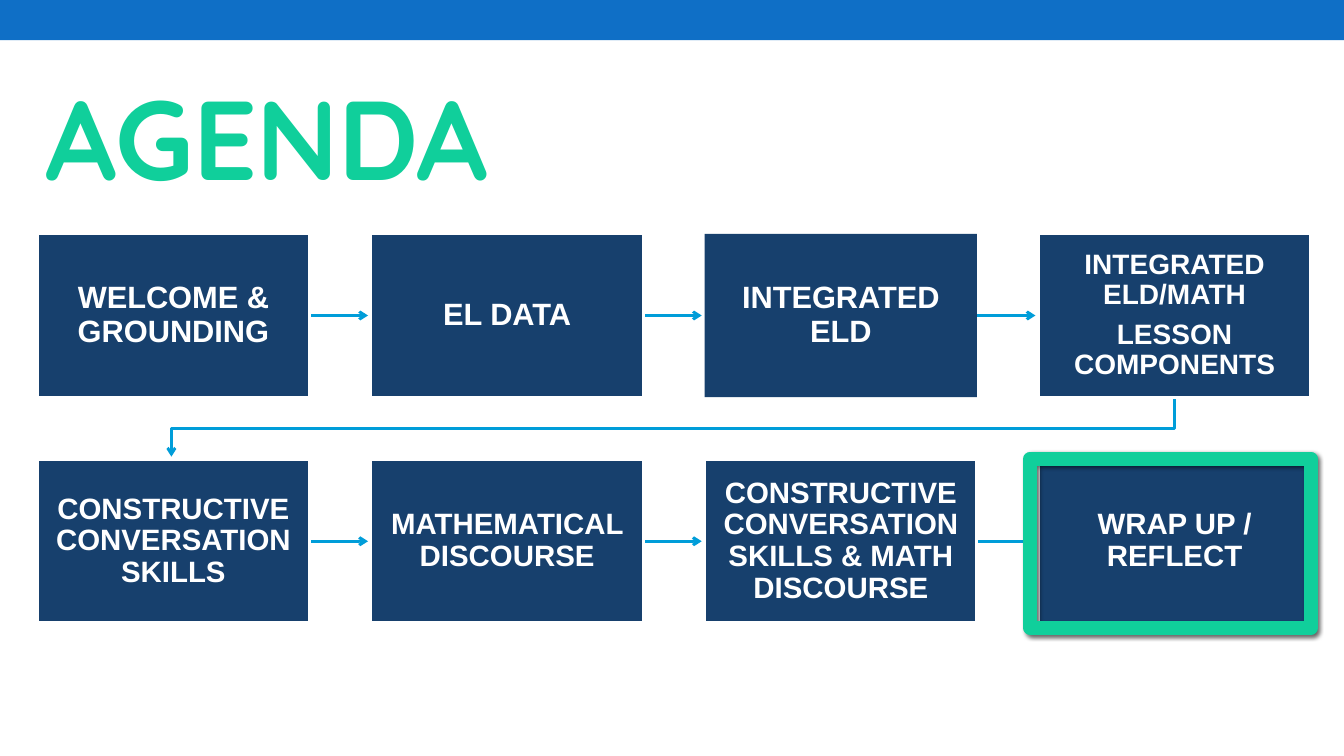
from dataclasses import dataclass

from lxml.etree import SubElement
from pptx import Presentation
from pptx.dml.color import RGBColor
from pptx.enum.shapes import MSO_CONNECTOR as Connector, MSO_SHAPE as Preset
from pptx.enum.text import MSO_ANCHOR as Anchor, MSO_AUTO_SIZE as AutoSize, PP_ALIGN as Align
from pptx.oxml import parse_xml
from pptx.oxml.ns import nsdecls, qn
from pptx.util import Inches, Pt


@dataclass(frozen=True)
class Theme:
    band: RGBColor = RGBColor.from_string("0F6FC6")
    accent: RGBColor = RGBColor.from_string("10CF9B")
    box: RGBColor = RGBColor.from_string("17406D")
    arrow: RGBColor = RGBColor.from_string("009DD9")
    white: RGBColor = RGBColor.from_string("FFFFFF")
    title_font: str = "Quicksand"
    body_font: str = "Arial"
    title_size: float = 80
    arrow_width: float = 2
    border_width: float = 2.08
    frame_width: float = 10


@dataclass(frozen=True)
class Step:
    text: str
    size: float
    inset: float
    bordered: bool = True


THEME = Theme()
BOX_WIDTH, BOX_HEIGHT = 2.7, 1.62
FIRST_LEFT, PITCH = 0.37, 3.31
ROW_TOPS = (2.32, 4.56)
ARROW_LENGTH = 0.58

ROWS = (
    (
        Step("WELCOME & GROUNDING", 22, 0.17),
        Step("EL DATA", 22, 0.17),
        Step("INTEGRATED ELD", 22, 0.17, bordered=False),
        Step("INTEGRATED ELD/MATH\nLESSON COMPONENTS", 20, 0.16),
    ),
    (
        Step("CONSTRUCTIVE CONVERSATION SKILLS", 21, 0.16),
        Step("MATHEMATICAL DISCOURSE", 21, 0.16),
        Step("CONSTRUCTIVE CONVERSATION SKILLS & MATH DISCOURSE", 21, 0.16),
        Step("WRAP UP / REFLECT", 21, 0.16),
    ),
)


def style_arrow(line_shape) -> None:
    line_shape.line.color.rgb = THEME.arrow
    line_shape.line.width = Pt(THEME.arrow_width)
    outline = line_shape.line._get_or_add_ln()
    SubElement(outline, qn("a:tailEnd"), type="arrow")


def add_arrow(page, left: float, middle: float) -> None:
    arrow = page.shapes.add_connector(
        Connector.STRAIGHT, Inches(left), Inches(middle),
        Inches(left + ARROW_LENGTH), Inches(middle))
    style_arrow(arrow)
    SubElement(arrow._element.spPr, qn("a:effectLst"))


def add_row_link(page) -> None:
    start_x, end_x = 11.65, 1.7
    start_y, turn_y, end_y = 3.94, 4.25, 4.53
    builder = page.shapes.build_freeform(Inches(start_x), Inches(start_y))
    corners = ((start_x, turn_y), (end_x, turn_y), (end_x, end_y))
    builder.add_line_segments([(Inches(x), Inches(y)) for x, y in corners], close=False)
    link = builder.convert_to_shape()
    link.shadow.inherit = False
    link.fill.background()
    style_arrow(link)


def add_step(page, step: Step, left: float, top: float) -> None:
    box = page.shapes.add_shape(
        Preset.RECTANGLE, Inches(left), Inches(top), Inches(BOX_WIDTH), Inches(BOX_HEIGHT))
    box.shadow.inherit = False
    box.fill.solid()
    box.fill.fore_color.rgb = THEME.box
    if step.bordered:
        box.line.color.rgb = THEME.white
        box.line.width = Pt(THEME.border_width)
    else:
        box.line.fill.background()
    frame = box.text_frame
    frame.word_wrap = True
    frame.vertical_anchor = Anchor.MIDDLE
    frame.margin_left = frame.margin_right = Inches(step.inset)
    frame.margin_top = frame.margin_bottom = Inches(step.inset)
    frame.text = step.text
    for para in frame.paragraphs:
        para.alignment = Align.CENTER
        para.line_spacing = 0.9
        para.space_after = Pt(step.size * 0.35)
        for span in para.runs:
            span.font.name = THEME.body_font
            span.font.size = Pt(step.size)
            span.font.bold = True
            span.font.color.rgb = THEME.white


def add_band(page, width: int) -> None:
    band = page.shapes.add_shape(Preset.RECTANGLE, 0, 0, width, Inches(0.4))
    band.shadow.inherit = False
    band.fill.solid()
    band.fill.fore_color.rgb = THEME.band
    band.line.fill.background()


def format_title(title) -> None:
    title.left, title.top = Inches(0.35), Inches(0.48)
    title.width, title.height = Inches(11), Inches(1.59)
    frame = title.text_frame
    frame.text = "AGENDA"
    frame.word_wrap = True
    frame.auto_size = AutoSize.NONE
    frame.vertical_anchor = Anchor.BOTTOM
    para = frame.paragraphs[0]
    para.alignment = Align.LEFT
    para.line_spacing = 0.85
    span = para.runs[0]
    span.font.name = THEME.title_font
    span.font.size = Pt(THEME.title_size)
    span.font.bold = True
    span.font.color.rgb = THEME.accent
    span._r.get_or_add_rPr().set("spc", "-50")


def add_highlight(page) -> None:
    highlight = page.shapes.add_shape(
        Preset.RECTANGLE, Inches(10.22), Inches(4.55), Inches(2.78), Inches(1.68))
    highlight.fill.background()
    highlight.line.color.rgb = THEME.accent
    highlight.line.width = Pt(THEME.frame_width)
    highlight._element.spPr.append(parse_xml(
        f'<a:effectLst {nsdecls("a")}>'
        f'<a:outerShdw blurRad="{Pt(3)}" dist="{Pt(2)}" dir="2700000" rotWithShape="0">'
        '<a:srgbClr val="000000"><a:alpha val="60000"/></a:srgbClr>'
        '</a:outerShdw></a:effectLst>'))


def main() -> None:
    deck = Presentation()
    deck.slide_width, deck.slide_height = Inches(13.33), Inches(7.5)
    page = deck.slides.add_slide(deck.slide_layouts[5])

    # Header
    add_band(page, deck.slide_width)
    format_title(page.shapes.title)

    # Arrows and boxes of the agenda
    add_row_link(page)
    for top, steps in zip(ROW_TOPS, ROWS):
        for column, step in enumerate(steps):
            left = FIRST_LEFT + column * PITCH
            if column < len(steps) - 1:
                add_arrow(page, left + BOX_WIDTH, top + BOX_HEIGHT / 2)
            add_step(page, step, left, top)

    # Frame around the current step
    add_highlight(page)
    deck.save("out.pptx")


if __name__ == "__main__":
    main()
